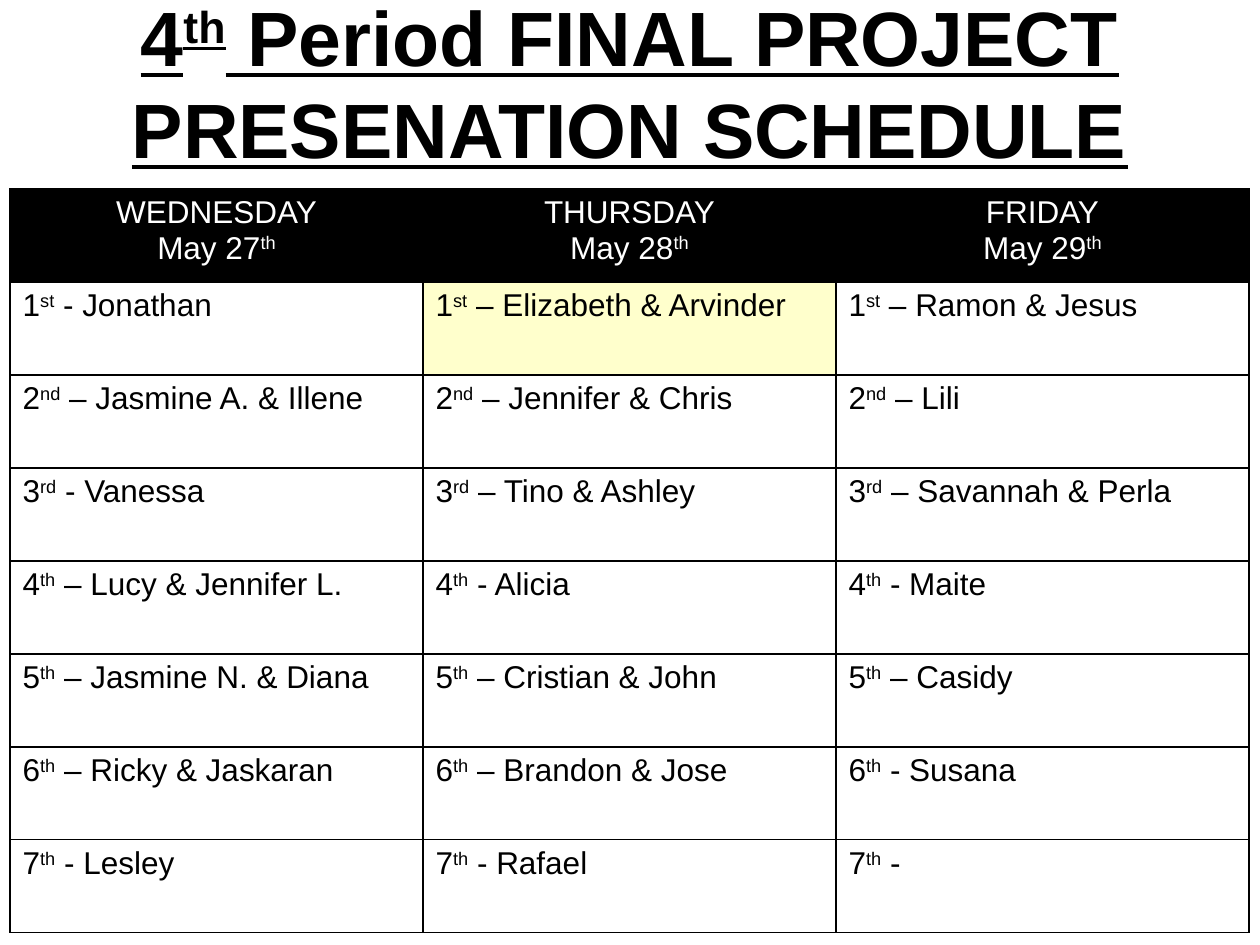
import pptx
import pptx.dml.color
import pptx.enum.text
import pptx.oxml
import pptx.oxml.ns
import pptx.util
from lxml import etree

PX = 914400 / 126
THEME = {
    "font": "Arial",
    "title_size": 44,
    "body_size": 18,
    "ink": "000000",
    "paper": "FFFFFF",
    "highlight": "FFFFCC",
}
TITLE = ["4^th^ Period FINAL PROJECT", "PRESENATION SCHEDULE"]
DAYS = [["WEDNESDAY", "May 27^th^"], ["THURSDAY", "May 28^th^"], ["FRIDAY", "May 29^th^"]]
ORDINALS = ["1^st^", "2^nd^", "3^rd^", "4^th^", "5^th^", "6^th^", "7^th^"]
PRESENTERS = [
    ["- Jonathan", "– Elizabeth & Arvinder", "– Ramon & Jesus"],
    ["– Jasmine A. & Illene", "– Jennifer & Chris", "– Lili"],
    ["- Vanessa", "– Tino & Ashley", "– Savannah & Perla"],
    ["– Lucy & Jennifer L.", "- Alicia", "- Maite"],
    ["– Jasmine N. & Diana", "– Cristian & John", "– Casidy"],
    ["– Ricky & Jaskaran", "– Brandon & Jose", "- Susana"],
    ["- Lesley", "- Rafael", "-"],
]
HIGHLIGHTED = (1, 1)


def px(length):
    return pptx.util.Emu(round(length * PX))


def color(name):
    return pptx.dml.color.RGBColor.from_string(THEME[name])


def write_lines(frame, lines, size, ink, centered=False, **extra):
    """Write one paragraph per line; text between carets is superscript."""
    formats = {"name": THEME["font"], "size": pptx.util.Pt(THEME[size]), **extra}
    for number, line in enumerate(lines):
        para = frame.add_paragraph() if number else frame.paragraphs[0]
        if centered:
            para.alignment = pptx.enum.text.PP_ALIGN.CENTER
        for part, text in enumerate(line.split("^")):
            if not text:
                continue
            span = para.add_run()
            span.text = text
            for key, value in formats.items():
                setattr(span.font, key, value)
            span.font.color.rgb = color(ink)
            if part % 2:
                span.font._element.set("baseline", "30000")


def outline_cell(cell):
    """Add the four borders, which must precede the fill in the cell properties."""
    properties = cell._tc.get_or_add_tcPr()
    namespace = pptx.oxml.ns.nsdecls("a")
    for position, side in enumerate(("lnL", "lnR", "lnT", "lnB")):
        border = pptx.oxml.parse_xml(
            f'<a:{side} {namespace} w="12700"><a:solidFill>'
            f'<a:srgbClr val="{THEME["ink"]}"/></a:solidFill></a:{side}>')
        properties.insert(position, border)


def add_title(page, left, top, width, height):
    box = page.shapes.add_textbox(px(left), px(top), px(width), px(height))
    frame = box.text_frame
    frame.word_wrap = True
    frame.vertical_anchor = pptx.enum.text.MSO_ANCHOR.MIDDLE
    write_lines(frame, TITLE, "title_size", "ink", centered=True, bold=True, underline=True)


def add_schedule(page, left, top, width, height):
    rows, columns = len(ORDINALS) + 1, len(DAYS)
    table = page.shapes.add_table(
        rows, columns, px(left), px(top), px(width), px(height)).table
    for column in table.columns:
        column.width = px(width // columns)
    for row in table.rows:
        row.height = px(height // rows)
    for r in range(rows):
        for c in range(columns):
            cell = table.cell(r, c)
            header = r == 0
            fill = "ink" if header else "highlight" if (r, c) == HIGHLIGHTED else "paper"
            cell.fill.solid()
            cell.fill.fore_color.rgb = color(fill)
            outline_cell(cell)
            lines = DAYS[c] if header else [f"{ORDINALS[r - 1]} {PRESENTERS[r - 1][c]}"]
            write_lines(cell.text_frame, lines, "body_size",
                        "paper" if header else "ink", centered=header, bold=False)


def main():
    deck = pptx.Presentation()
    deck.slide_width, deck.slide_height = px(1260), px(945)
    page = deck.slides.add_slide(deck.slide_layouts[6])
    add_title(page, 0, 38, 1260, 88)
    add_schedule(page, 10, 189, 1239, 744)
    deck.save("out.pptx")


if __name__ == "__main__":
    main()
